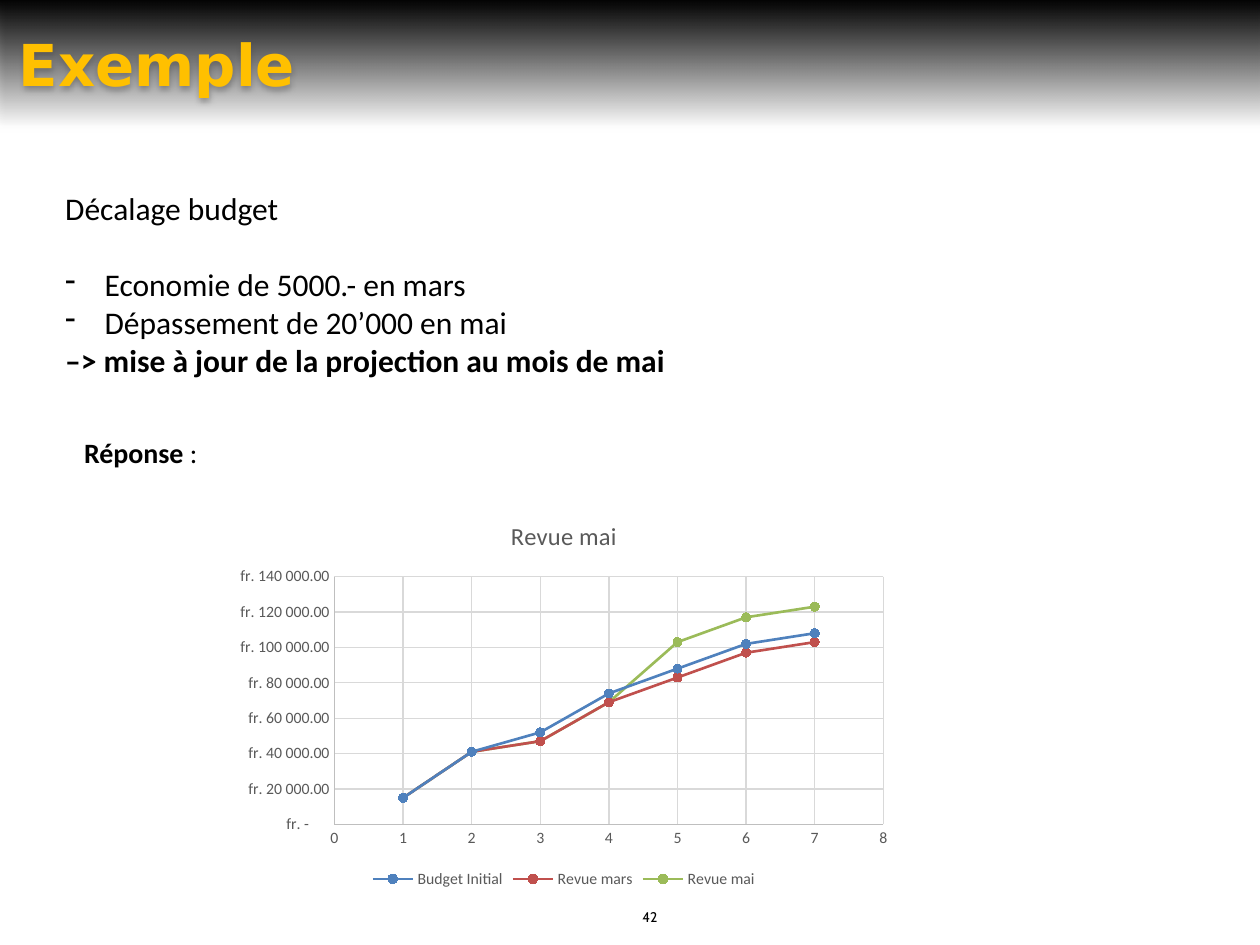
"""Build the budget shift example slide with its May review chart."""
from dataclasses import dataclass

import pptx
import pptx.chart.data
import pptx.dml.color
import pptx.enum.chart
import pptx.enum.shapes
import pptx.enum.text
import pptx.oxml
import pptx.oxml.ns
import pptx.util

Pt = pptx.util.Pt
NAMESPACE = pptx.oxml.ns.nsdecls("a")


@dataclass(frozen=True)
class Theme:
    """Colours, fonts and type sizes of the slide."""
    white: str = "FFFFFF"
    black: str = "000000"
    fade: str = "4B4B4B"
    title: str = "FFC000"
    label: str = "595959"
    axis: str = "BFBFBF"
    grid: str = "D9D9D9"
    series: tuple = ("4F81BD", "C0504D", "9BBB59")
    title_font: str = "DejaVu Sans"
    body_font: str = "Calibri"
    number_font: str = "Cabin"
    title_size: int = 33
    body_size: int = 18
    answer_size: int = 16
    chart_title_size: int = 14
    label_size: int = 9
    number_size: int = 8


THEME = Theme()
MONTHS = range(1, 8)
REVIEWS = {
    "Budget Initial": (15000, 41000, 52000, 74000, 88000, 102000, 108000),
    "Revue mars": (15000, 41000, 47000, 69000, 83000, 97000, 103000),
    "Revue mai": (15000, 41000, 47000, 69000, 103000, 117000, 123000),
}


def rgb(color):
    """Return a colour object for a hexadecimal string."""
    return pptx.dml.color.RGBColor.from_string(color)


def set_font(font, name, size, color, bold=False):
    """Set the face, size, colour and weight of a font."""
    font.name, font.size, font.bold = name, Pt(size), bold
    font.color.rgb = rgb(color)


def set_line(line, color, width):
    """Give a line a solid colour and a width."""
    line.color.rgb = rgb(color)
    line.width = Pt(width)


def add_run(paragraph, text, name, size, color=THEME.black, bold=False):
    """Append one formatted run to a paragraph."""
    run = paragraph.add_run()
    run.text = text
    set_font(run.font, name, size, color, bold)


def add_rectangle(slide, width, height):
    """Add a rectangle at the top left corner of the slide."""
    shape = slide.shapes.add_shape(
        pptx.enum.shapes.MSO_SHAPE.RECTANGLE, 0, 0, Pt(width), Pt(height))
    shape.shadow.inherit = False
    return shape


def add_background(slide):
    """Cover the slide with a white panel."""
    shape = add_rectangle(slide, 720, 540)
    shape.fill.solid()
    shape.fill.fore_color.rgb = rgb(THEME.white)
    set_line(shape.line, THEME.white, 2)


def add_header(slide, text):
    """Add the fading title band with its soft shadow."""
    shape = add_rectangle(slide, 721.5, 72)
    shape.line.fill.background()
    shape.fill.gradient()
    shape.fill.gradient_angle = 90
    for stop, color in zip(shape.fill.gradient_stops, (THEME.fade, THEME.black)):
        stop.color.rgb = rgb(color)
    properties = shape.element.spPr
    first_color = properties.find(".//" + pptx.oxml.ns.qn("a:srgbClr"))
    first_color.append(pptx.oxml.parse_xml(f'<a:alpha {NAMESPACE} val="0"/>'))
    effects = properties.find(pptx.oxml.ns.qn("a:effectLst"))
    effects.append(pptx.oxml.parse_xml(
        f'<a:outerShdw {NAMESPACE} blurRad="{Pt(3.1)}" dist="{Pt(1.8)}" dir="5400000" '
        f'rotWithShape="0"><a:srgbClr val="{THEME.black}"><a:alpha val="35000"/>'
        '</a:srgbClr></a:outerShdw>'))
    frame = shape.text_frame
    frame.margin_left = frame.margin_right = Pt(10.8)
    frame.margin_top = frame.margin_bottom = Pt(10.8)
    frame.vertical_anchor = pptx.enum.text.MSO_ANCHOR.MIDDLE
    paragraph = frame.paragraphs[0]
    paragraph.alignment = pptx.enum.text.PP_ALIGN.LEFT
    add_run(paragraph, text, THEME.title_font, THEME.title_size, THEME.title, True)


def add_text_frame(slide, left, top, width, height):
    """Add a wrapping text box and return its frame."""
    box = slide.shapes.add_textbox(Pt(left), Pt(top), Pt(width), Pt(height))
    box.text_frame.word_wrap = True
    return box.text_frame


def add_dash(paragraph):
    """Give a paragraph a hanging dash bullet."""
    properties = paragraph._p.get_or_add_pPr()
    properties.set("marL", str(Pt(22.5)))
    properties.set("indent", str(-Pt(22.5)))
    properties.append(pptx.oxml.parse_xml(f'<a:buChar {NAMESPACE} char="-"/>'))


def add_statement(slide):
    """Add the description of the budget shift."""
    frame = add_text_frame(slide, 30.2, 104.4, 550.8, 116.6)
    size = THEME.body_size
    add_run(frame.paragraphs[0], "Décalage budget", THEME.body_font, size)
    for index, text in enumerate(
            ("Economie de 5000.- en mars", "Dépassement de 20’000 en mai")):
        paragraph = frame.add_paragraph()
        if index == 0:
            paragraph.space_before = Pt(22)
        add_dash(paragraph)
        add_run(paragraph, text, THEME.body_font, size)
    add_run(frame.add_paragraph(), "–> mise à jour de la projection au mois de mai",
            THEME.body_font, size, bold=True)


def add_answer(slide):
    """Add the answer label above the chart."""
    frame = add_text_frame(slide, 41, 226, 584, 199.5)
    frame.margin_top = Pt(23)
    paragraph = frame.paragraphs[0]
    add_run(paragraph, "Réponse", THEME.body_font, THEME.answer_size, bold=True)
    add_run(paragraph, "\N{NO-BREAK SPACE}:", THEME.body_font, THEME.answer_size)


def add_page_number(slide, text):
    """Add the page number at the foot of the slide."""
    frame = add_text_frame(slide, 360, 515.5, 235.4, 17.3)
    add_run(frame.paragraphs[0], text, THEME.number_font, THEME.number_size)


def style_axis(axis, maximum, step, number_format):
    """Set the scale, grid, line and labels of an axis."""
    axis.minimum_scale, axis.maximum_scale, axis.major_unit = 0, maximum, step
    axis.has_major_gridlines = True
    set_line(axis.major_gridlines.format.line, THEME.grid, 0.75)
    set_line(axis.format.line, THEME.axis, 0.75)
    axis.major_tick_mark = axis.minor_tick_mark = pptx.enum.chart.XL_TICK_MARK.NONE
    axis.tick_labels.number_format = number_format
    axis.tick_labels.number_format_is_linked = False
    set_font(axis.tick_labels.font, THEME.body_font, THEME.label_size, THEME.label)


def style_series(series, color):
    """Draw a series as a straight line with round markers."""
    series.smooth = False
    set_line(series.format.line, color, 1.5)
    marker = series.marker
    marker.style, marker.size = pptx.enum.chart.XL_MARKER_STYLE.CIRCLE, 5
    marker.format.fill.solid()
    marker.format.fill.fore_color.rgb = rgb(color)
    set_line(marker.format.line, color, 0.75)


def add_review_chart(slide):
    """Add the scatter chart comparing the budget reviews."""
    data = pptx.chart.data.XyChartData()
    for name, values in REVIEWS.items():
        series = data.add_series(name)
        for month, value in zip(MONTHS, values):
            series.add_data_point(month, value)
    chart = slide.shapes.add_chart(
        pptx.enum.chart.XL_CHART_TYPE.XY_SCATTER_LINES,
        Pt(129.6), Pt(285.8), Pt(385.2), Pt(224.6), data).chart
    set_font(chart.font, THEME.body_font, 10, THEME.black)
    chart.plots[0].vary_by_categories = False
    chart.has_title = True
    add_run(chart.chart_title.text_frame.paragraphs[0], "Revue mai",
            THEME.body_font, THEME.chart_title_size, THEME.label)
    chart.chart_title.include_in_layout = False
    chart.has_legend = True
    chart.legend.position = pptx.enum.chart.XL_LEGEND_POSITION.BOTTOM
    chart.legend.include_in_layout = False
    set_font(chart.legend.font, THEME.body_font, THEME.label_size, THEME.label)
    style_axis(chart.category_axis, 8, 1, "General")
    amount = r'"fr. "#\ ##0.00'
    style_axis(chart.value_axis, 140000, 20000, f'{amount};-{amount};"fr. -"??_ ')
    for series, color in zip(chart.plots[0].series, THEME.series):
        style_series(series, color)


def main():
    """Build and save the presentation."""
    presentation = pptx.Presentation()
    presentation.slide_width, presentation.slide_height = Pt(720), Pt(540)
    slide = presentation.slides.add_slide(presentation.slide_layouts[6])
    add_background(slide)
    add_header(slide, "Exemple")
    add_statement(slide)
    add_page_number(slide, "42")
    add_answer(slide)
    add_review_chart(slide)
    presentation.save("out.pptx")


if __name__ == "__main__":
    main()
